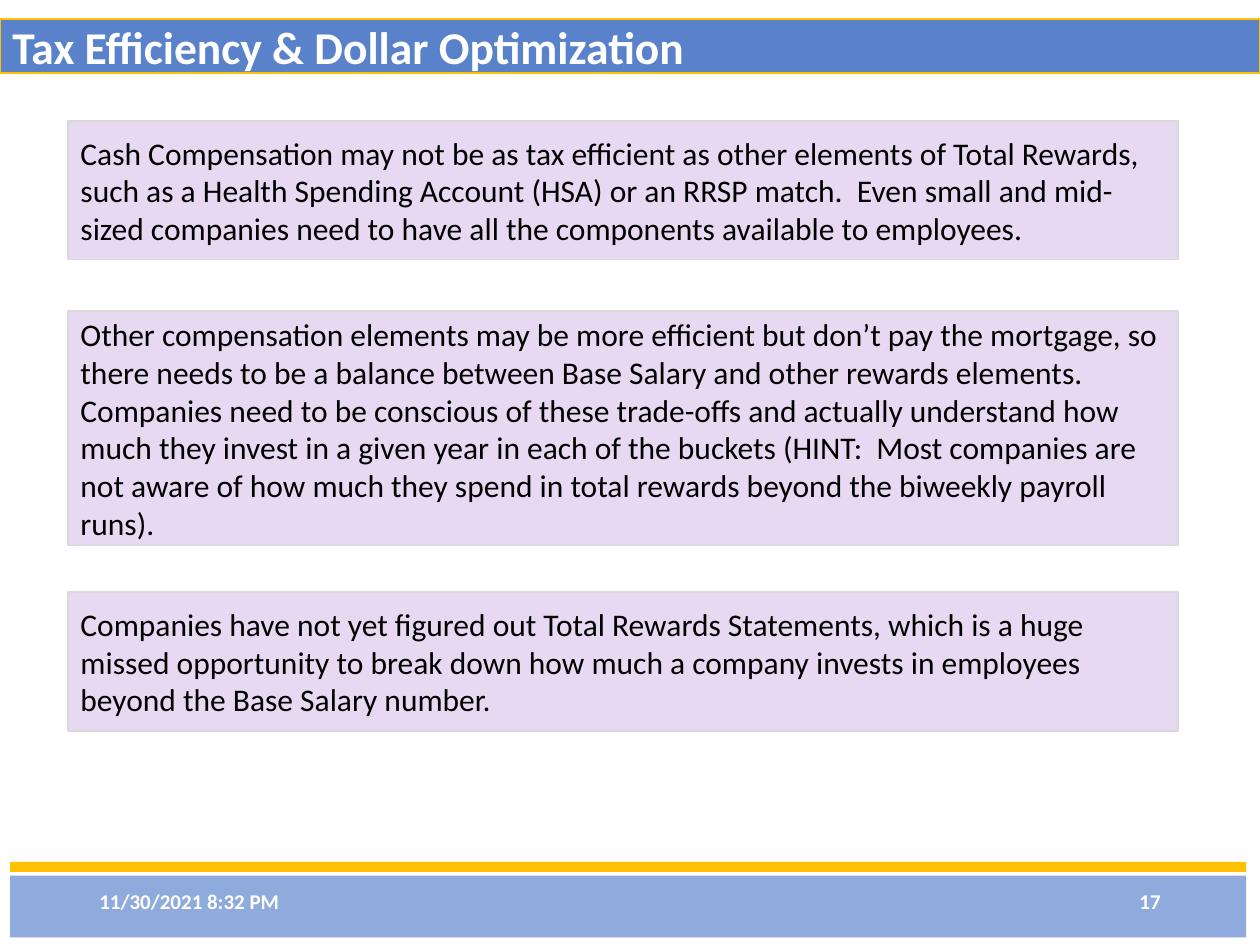
from dataclasses import dataclass, field
from typing import Optional

from pptx import Presentation
from pptx.dml.color import RGBColor
from pptx.enum.shapes import MSO_SHAPE
from pptx.enum.text import MSO_ANCHOR, PP_ALIGN
from pptx.util import Inches, Pt

BLUE, PALE_BLUE, GOLD = "5982CB", "8FAADC", "FFC000"
LILAC, GREY, WHITE, BLACK = "E8D9F3", "D9D9D9", "FFFFFF", "000000"

BODY = {"name": "Calibri", "size": Pt(18), "bold": False}
TITLE = {"name": "Calibri", "size": Pt(26), "bold": True}
FOOTER = {"name": "Calibri", "size": Pt(12), "bold": True}


@dataclass
class Box:
    """A rectangle placed in percent of the slide's width and height."""
    left: float
    top: float
    width: float
    height: float
    fill: Optional[str] = None
    line: Optional[str] = None
    weight: float = 1
    text: str = ""
    font: dict = field(default_factory=lambda: BODY)
    color: str = WHITE
    align: PP_ALIGN = PP_ALIGN.LEFT


def paint(color_format, value: str) -> None:
    color_format.rgb = RGBColor.from_string(value)


def write(sp, box: Box) -> None:
    tf = sp.text_frame
    tf.word_wrap = True
    tf.vertical_anchor = MSO_ANCHOR.MIDDLE
    p = tf.paragraphs[0]
    p.alignment = box.align
    r = p.add_run()
    r.text = box.text
    for name, value in box.font.items():
        setattr(r.font, name, value)
    paint(r.font.color, box.color)


def draw(prs, s, box: Box) -> None:
    w, h = prs.slide_width, prs.slide_height
    place = (int(w * box.left / 100), int(h * box.top / 100),
             int(w * box.width / 100), int(h * box.height / 100))
    if box.fill:
        sp = s.shapes.add_shape(MSO_SHAPE.RECTANGLE, *place)
        sp.shadow.inherit = False
        sp.fill.solid()
        paint(sp.fill.fore_color, box.fill)
        if box.line:
            paint(sp.line.color, box.line)
            sp.line.width = Pt(box.weight)
        else:
            sp.line.fill.background()
    else:
        sp = s.shapes.add_textbox(*place)
    if box.text:
        write(sp, box)


def panel(top: float, height: float, text: str) -> Box:
    return Box(5.4, top, 88.1, height, LILAC, GREY, text=text, color=BLACK)


def footer(left: float, text: str, align: PP_ALIGN) -> Box:
    return Box(left, 92.67, 22.5, 5.33, text=text, font=FOOTER, align=align)


BOXES = [
    # Footer bands
    Box(0.8, 92.67, 98.1, 6.53, PALE_BLUE),
    Box(0.8, 91.2, 98.1, 1.07, GOLD),
    # Title bar
    Box(0, 2, 100, 5.73, BLUE, GOLD, 1.5,
        "Tax Efficiency & Dollar Optimization", TITLE),
    # Date and slide number
    footer(6.9, "11/30/2021 8:32 PM", PP_ALIGN.LEFT),
    footer(70.6, "17", PP_ALIGN.RIGHT),
    # Message panels
    panel(12.8, 14.67,
          "Cash Compensation may not be as tax efficient as other elements of "
          "Total Rewards, such as a Health Spending Account (HSA) or an RRSP "
          "match.  Even small and mid-sized companies need to have all the "
          "components available to employees."),
    panel(32.93, 24.8,
          "Other compensation elements may be more efficient but don’t pay the "
          "mortgage, so there needs to be a balance between Base Salary and "
          "other rewards elements. Companies need to be conscious of these "
          "trade-offs and actually understand how much they invest in a given "
          "year in each of the buckets (HINT:  Most companies are not aware of "
          "how much they spend in total rewards beyond the biweekly payroll "
          "runs)."),
    panel(62.67, 14.67,
          "Companies have not yet figured out Total Rewards Statements, which "
          "is a huge missed opportunity to break down how much a company "
          "invests in employees beyond the Base Salary number."),
]


def main() -> None:
    prs = Presentation()
    prs.slide_width, prs.slide_height = Inches(10), Inches(7.5)
    s = prs.slides.add_slide(prs.slide_layouts[6])
    for box in BOXES:
        draw(prs, s, box)
    prs.save("out.pptx")


if __name__ == "__main__":
    main()
